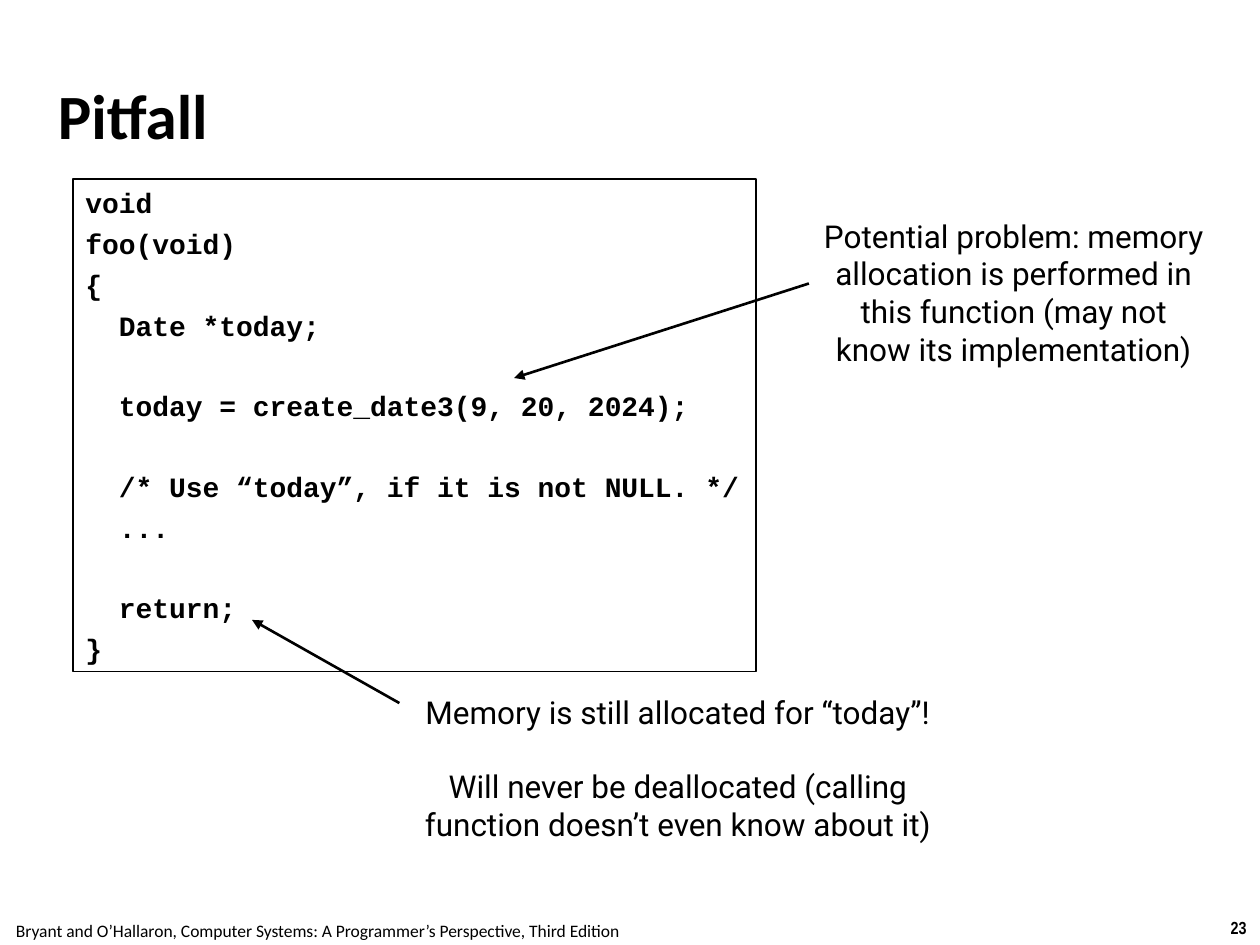
from dataclasses import dataclass

from lxml import etree
from pptx import Presentation
from pptx import util as u
from pptx.dml.color import RGBColor
from pptx.enum import shapes, text
from pptx.oxml.ns import qn

COLORS = {"ink": "000000", "paper": "FFFFFF"}
INK = RGBColor.from_string(COLORS["ink"])

CODE = """void
foo(void)
{
  Date *today;

  today = create_date3(9, 20, 2024);

  /* Use “today”, if it is not NULL. */
  ...

  return;
}"""
CODE_GAP, CODE_LINE = 4.3, 18.1  # points
CALLOUT_GAP = 21


@dataclass
class Line:
    words: str
    space_before: float = 0


@dataclass
class TextStyle:
    name: str
    size: float
    bold: bool = False
    alignment: text.PP_ALIGN = text.PP_ALIGN.CENTER


@dataclass
class Callout:
    box: tuple[float, float, float, float]
    lines: list[Line]
    arrow_start: tuple[float, float]
    arrow_end: tuple[float, float]


TITLE = TextStyle("Calibri", 36, True, text.PP_ALIGN.LEFT)
LISTING = TextStyle("Courier New", 16, True, text.PP_ALIGN.LEFT)
NOTE = TextStyle("Roboto", 18)
FOOTER = TextStyle("Calibri", 10)
PAGE_NUMBER = TextStyle("Arial Narrow", 10, True)

CALLOUTS = [
    Callout(
        (3.17, 5.45, 4.42, 1.3),
        [Line("Memory is still allocated for “today”!"),
         Line("Will never be deallocated (calling function doesn’t even know about it)",
              CALLOUT_GAP)],
        (3.17, 5.58), (2, 4.92),
    ),
    Callout(
        (6.42, 1.67, 3.25, 1.3),
        [Line("Potential problem: memory allocation is performed in this function "
              "(may not know its implementation)")],
        (6.42, 2.25), (4.08, 3),
    ),
]


def inches(values: tuple[float, ...]) -> list[u.Length]:
    return [u.Inches(value) for value in values]


def code_lines(source: str) -> list[Line]:
    """Turn each empty source line into extra space before the next line."""
    lines, gap = [], CODE_GAP
    for words in source.splitlines():
        if words:
            lines.append(Line(words, gap))
            gap = CODE_GAP
        else:
            gap += CODE_LINE + CODE_GAP
    return lines


def write(shape, lines: list[Line], style: TextStyle, **frame_format) -> None:
    frame = shape.text_frame
    settings = {"word_wrap": True, "vertical_anchor": text.MSO_ANCHOR.TOP} | frame_format
    for name, value in settings.items():
        setattr(frame, name, value)
    for index, line in enumerate(lines):
        paragraph = frame.add_paragraph() if index else frame.paragraphs[0]
        paragraph.alignment = style.alignment
        paragraph.space_before = u.Pt(line.space_before)
        run = paragraph.add_run()
        run.text = line.words
        font_format = {"name": style.name, "size": u.Pt(style.size), "bold": style.bold}
        for name, value in font_format.items():
            setattr(run.font, name, value)
        run.font.color.rgb = INK


def add_text(parent, box: tuple[float, ...], lines: list[Line], style: TextStyle,
             **frame_format) -> None:
    write(parent.add_textbox(*inches(box)), lines, style, **frame_format)


def add_arrow(parent, start: tuple[float, float], end: tuple[float, float]) -> None:
    arrow = parent.add_connector(shapes.MSO_CONNECTOR.STRAIGHT, *inches(start + end))
    arrow.line.color.rgb = INK
    arrow.line.width = u.Pt(1.5)
    etree.SubElement(arrow.line._get_or_add_ln(), qn("a:tailEnd"), type="triangle")
    etree.SubElement(arrow._element.spPr, qn("a:effectLst"))


def add_callout(slide, callout: Callout) -> None:
    group = slide.shapes.add_group_shape()
    add_arrow(group.shapes, callout.arrow_start, callout.arrow_end)
    add_text(group.shapes, callout.box, callout.lines, NOTE)


def add_code_box(slide) -> None:
    box = slide.shapes.add_shape(shapes.MSO_SHAPE.RECTANGLE,
                                 *inches((0.58, 1.42, 5.42, 3.91)))
    box.shadow.inherit = False
    box.fill.background()
    box.line.color.rgb = INK
    box.line.width = u.Pt(0.75)
    write(box, code_lines(CODE), LISTING)


def main() -> None:
    presentation = Presentation()
    presentation.slide_width, presentation.slide_height = inches((10, 7.5))
    slide = presentation.slides.add_slide(presentation.slide_layouts[6])
    slide.background.fill.solid()
    slide.background.fill.fore_color.rgb = RGBColor.from_string(COLORS["paper"])

    add_text(slide.shapes, (9.66, 7.23, 0.34, 0.27), [Line("23")], PAGE_NUMBER,
             word_wrap=False)
    add_text(slide.shapes, (-0.02, 7.25, 5.08, 0.27),
             [Line("Bryant and O’Hallaron, Computer Systems: "
                   "A Programmer’s Perspective, Third Edition")],
             FOOTER, word_wrap=False)
    margins = {f"margin_{side}": u.Inches(0.04)
               for side in ("left", "top", "right", "bottom")}
    add_text(slide.shapes, (0.42, 0.28, 9.17, 1.25), [Line("Pitfall")], TITLE,
             vertical_anchor=text.MSO_ANCHOR.MIDDLE, **margins)
    add_code_box(slide)
    for callout in CALLOUTS:
        add_callout(slide, callout)

    presentation.save("out.pptx")


if __name__ == "__main__":
    main()
